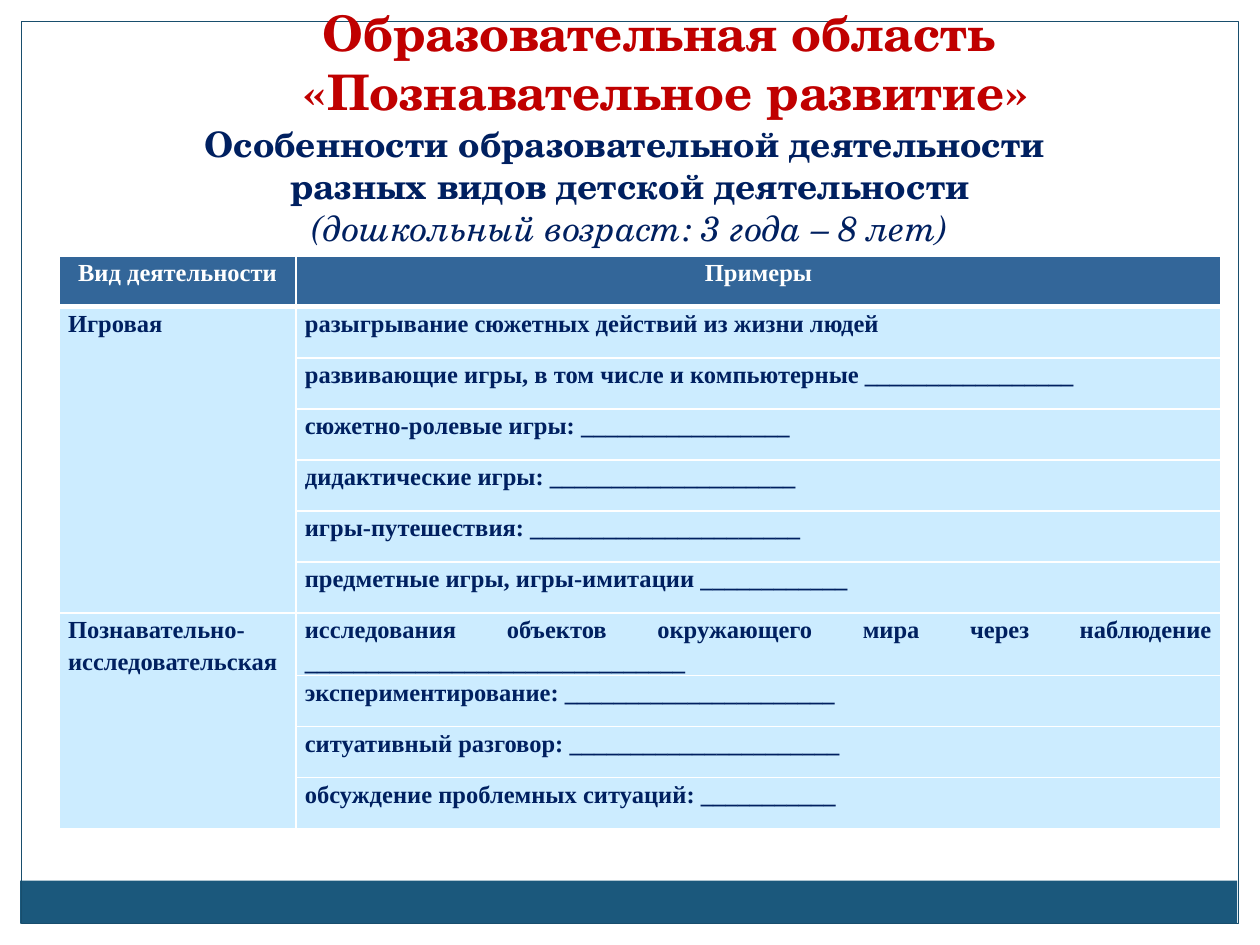
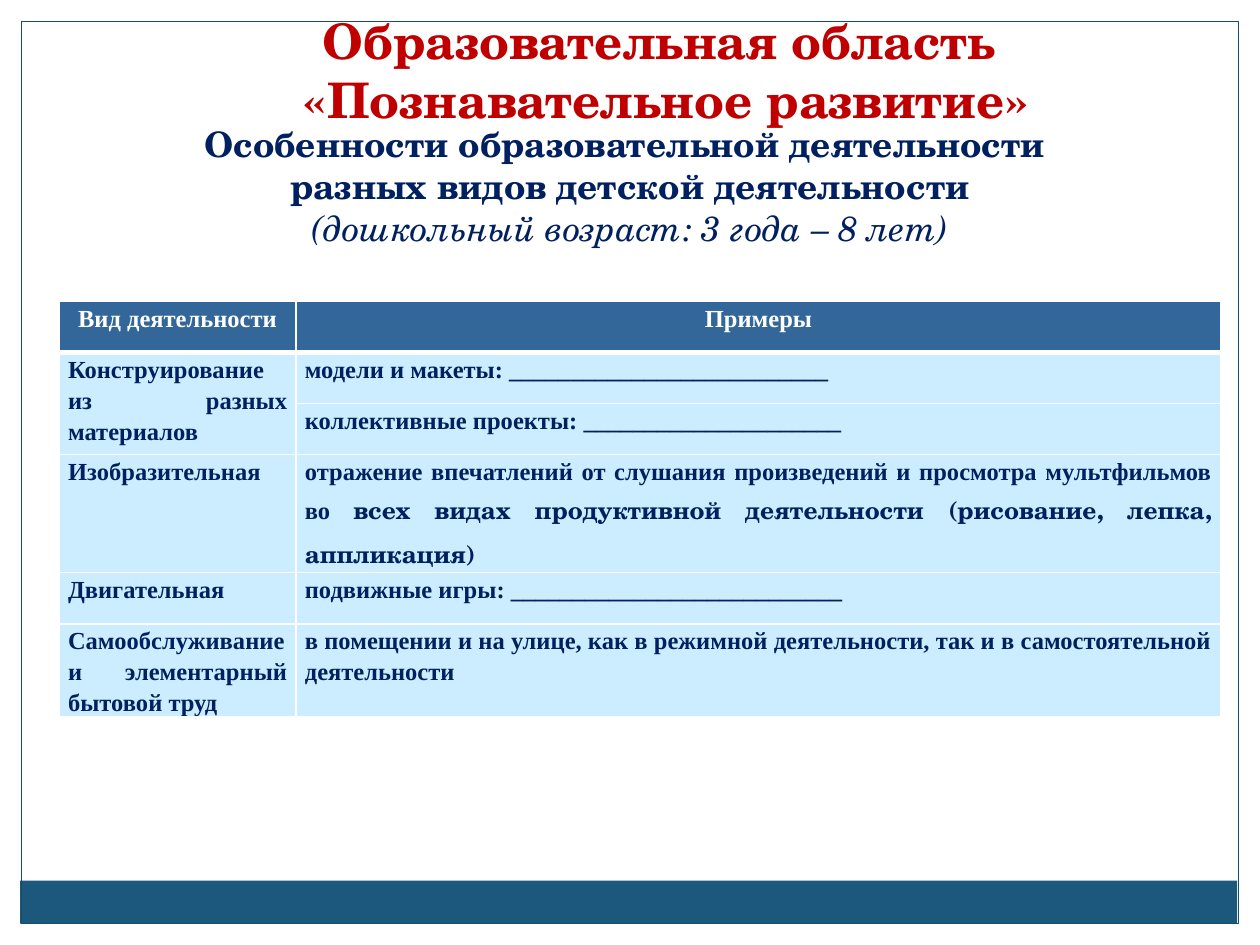
"""Build two slides on activity types in cognitive development."""
from lxml.etree import SubElement
from pptx import Presentation
from pptx.dml.color import RGBColor
from pptx.enum.shapes import MSO_SHAPE as Shape
from pptx.enum.text import MSO_ANCHOR as Anchor, MSO_AUTO_SIZE as AutoSize, PP_ALIGN as Align
from pptx.oxml.ns import qn
from pptx.util import Inches, Pt

COLORS = {
    "white": "FFFFFF", "band": "1B587C", "frame": "184E6D", "title": "C00000",
    "text": "002060", "header": "336699", "cell": "CCECFF",
}
DISPLAY, BODY = "TeX Gyre Schola", "Times New Roman"

TITLE = ["Образовательная область ", "«Познавательное развитие»"]
SUBTITLE = [
    "Особенности образовательной деятельности ",
    "разных видов детской деятельности",
    "(дошкольный возраст: 3 года – 8 лет)",
]
HEADERS = ["Вид деятельности", "Примеры"]
SLIDES = [
    {"title_top": -0.03, "table_top": 2.03, "activities": [
        ("Игровая", [
            "разыгрывание сюжетных действий из жизни людей",
            "развивающие игры, в том числе и компьютерные _________________",
            "сюжетно-ролевые игры: _________________",
            "дидактические игры: ____________________",
            "игры-путешествия: ______________________",
            "предметные игры, игры-имитации ____________",
        ]),
        ("Познавательно-исследовательская", [
            "исследования объектов окружающего мира через наблюдение _______________________________",
            "экспериментирование: ______________________",
            "ситуативный разговор: ______________________",
            "обсуждение проблемных ситуаций: ___________",
        ]),
    ]},
    {"title_top": 0.03, "table_top": 2.39, "activities": [
        ("Конструирование из разных материалов", [
            "модели и макеты: __________________________",
            "коллективные проекты: _____________________",
        ]),
        ("Изобразительная", [
            ("отражение впечатлений от слушания произведений и просмотра мультфильмов во ",
             "всех видах продуктивной деятельности (рисование, лепка, аппликация)"),
        ]),
        ("Двигательная", ["подвижные игры: ___________________________"]),
        ("Самообслуживание и элементарный бытовой труд", [
            "в помещении и на улице, как в режимной деятельности, так и в самостоятельной деятельности",
        ]),
    ]},
]

FRAME_PARTS = [
    ((0, 0, 10, 0.17), "white", None),
    ((9.83, 0, 0.17, 7.5), "white", None),
    ((0, 0, 0.17, 7.5), "white", None),
    ((0.16, 6.99, 9.66, 0.34), "band", None),
    ((0.17, 0.17, 9.66, 7.16), None, "frame"),
]
TABLE_LEFT, COLUMN_WIDTHS, ROW_HEIGHT = 0.47, [1.88, 7.34], 4.46 / 11
TITLE_FONT = {"size": Pt(28), "name": DISPLAY, "bold": True}
SUBTITLE_FONT = {"size": Pt(20), "name": DISPLAY, "bold": True}
NOTE_FONT = {"size": Pt(20), "name": DISPLAY, "bold": False, "italic": True}
CELL_FONT = {"size": Pt(14), "name": BODY, "bold": True}
FRAME_TEXT = {"word_wrap": True, "auto_size": AutoSize.NONE, "vertical_anchor": Anchor.MIDDLE}
CELL_FORMAT = {"margin_left": Inches(0.07), "margin_right": Inches(0.07),
               "margin_top": 0, "margin_bottom": 0}


def apply(target, values):
    for name, value in values.items():
        setattr(target, name, value)


def rgb(name):
    return RGBColor.from_string(COLORS[name])


def add_run(paragraph, text, font, color):
    run = paragraph.add_run()
    run.text = text
    apply(run.font, font)
    run.font.color.rgb = rgb(color)


def place(shape, box):
    apply(shape, dict(zip(("left", "top", "width", "height"), map(Inches, box))))


def fill_lines(shape, lines, fonts, color, indent=0):
    frame = shape.text_frame
    apply(frame, FRAME_TEXT)
    for index, (line, font) in enumerate(zip(lines, fonts)):
        paragraph = frame.add_paragraph() if index else frame.paragraphs[0]
        paragraph.alignment = Align.CENTER
        if indent:
            paragraph._p.get_or_add_pPr().set("indent", str(Inches(indent)))
        add_run(paragraph, line, font, color)


def add_frame(slide):
    for box, fill, line in FRAME_PARTS:
        shape = slide.shapes.add_shape(Shape.RECTANGLE, *map(Inches, box))
        shape.shadow.inherit = False
        if fill:
            shape.fill.solid()
            shape.fill.fore_color.rgb = rgb(fill)
            shape.line.fill.background()
        else:
            shape.fill.background()
            shape.line.color.rgb = rgb(line)
            shape.line.width = Pt(0.75)


def set_borders(cell, widths):
    properties = cell._tc.get_or_add_tcPr()
    for index, (side, width) in enumerate(widths.items()):
        line = SubElement(properties, qn(f"a:ln{side}"), w=str(Pt(width)))
        fill = SubElement(line, qn("a:solidFill"))
        SubElement(fill, qn("a:srgbClr"), val=COLORS["white"])
        properties.insert(index, line)


def format_cell(cell, fill, borders):
    apply(cell, CELL_FORMAT)
    cell.fill.solid()
    cell.fill.fore_color.rgb = rgb(fill)
    set_borders(cell, borders)


def write_cell(cell, content, color, alignment):
    paragraph = cell.text_frame.paragraphs[0]
    apply(paragraph, {"alignment": alignment, "line_spacing": 1.15})
    runs = (content,) if isinstance(content, str) else content
    for text, name in zip(runs, (BODY, DISPLAY)):
        add_run(paragraph, text, {**CELL_FONT, "name": name}, color)


def add_activity_table(slide, top, activities):
    row_count = 1 + sum(len(examples) for _, examples in activities)
    table = slide.shapes.add_table(
        row_count, len(HEADERS), Inches(TABLE_LEFT), Inches(top),
        Inches(sum(COLUMN_WIDTHS)), Inches(ROW_HEIGHT * row_count)).table
    for column, width in zip(table.columns, COLUMN_WIDTHS):
        column.width = Inches(width)
    for row_index, row in enumerate(table.rows):
        row.height = Inches(ROW_HEIGHT)
        for cell in row.cells:
            if row_index:
                format_cell(cell, "cell", {"L": 1, "R": 1, "B": 1})
            else:
                format_cell(cell, "header", {"L": 1, "R": 1, "T": 1, "B": 3})
    for column_index, header in enumerate(HEADERS):
        write_cell(table.cell(0, column_index), header, "white", Align.CENTER)
    first = 1
    for activity, examples in activities:
        last = first + len(examples) - 1
        if last > first:
            table.cell(first, 0).merge(table.cell(last, 0))
        write_cell(table.cell(first, 0), activity, "text", Align.JUSTIFY)
        for row_index, example in enumerate(examples, first):
            write_cell(table.cell(row_index, 1), example, "text", Align.JUSTIFY)
        first = last + 1


def main():
    presentation = Presentation()
    apply(presentation, {"slide_width": Inches(10), "slide_height": Inches(7.5)})
    for content in SLIDES:
        slide = presentation.slides.add_slide(presentation.slide_layouts[5])
        add_frame(slide)
        add_activity_table(slide, content["table_top"], content["activities"])
        title = slide.shapes.title
        slide.shapes._spTree.append(title._element)
        place(title, (0.04, content["title_top"], 10, 1.04))
        fill_lines(title, TITLE, [TITLE_FONT] * 2, "title", indent=0.49)
        subtitle = slide.shapes.add_textbox(0, Inches(0.92), Inches(10), Inches(1.11))
        fill_lines(subtitle, SUBTITLE, [SUBTITLE_FONT, SUBTITLE_FONT, NOTE_FONT], "text")
    presentation.save("out.pptx")


if __name__ == "__main__":
    main()
